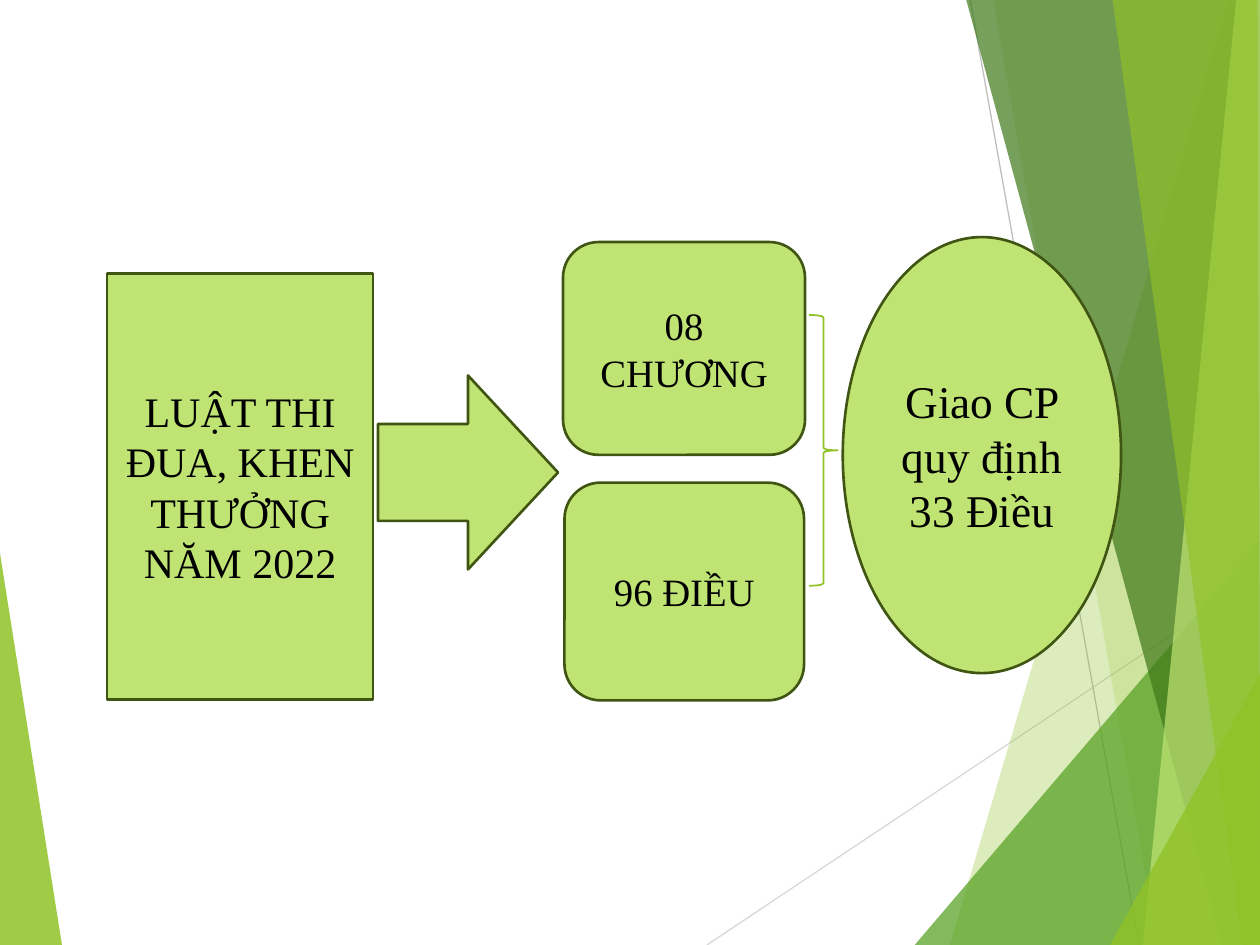
from dataclasses import dataclass

from lxml import etree
from pptx import Presentation
from pptx.dml.color import RGBColor
from pptx.enum import shapes, text
from pptx.oxml.ns import qn
from pptx.util import Cm, Pt


@dataclass(frozen=True)
class Theme:
    font: str = "Times New Roman"
    ink: str = "000000"
    lime: str = "90C226"
    pale: str = "C0E474"
    green: str = "54A021"
    forest: str = "3F7819"
    outline: str = "3F5511"
    ray_light: str = "D9D9D9"
    ray_dark: str = "BFBFBF"
    law_size: float = 24
    part_size: float = 22.1
    decree_size: float = 25.9


T = Theme()
W, H = 25.4, 19.05
SHAPE = shapes.MSO_SHAPE


def set_text(sp, content, size, color=T.ink, font=T.font):
    tf = sp.text_frame
    tf.word_wrap = True
    tf.vertical_anchor = text.MSO_ANCHOR.MIDDLE
    p = tf.paragraphs[0]
    p.alignment = text.PP_ALIGN.CENTER
    r = p.add_run()
    r.text = content
    r.font.name, r.font.size = font, Pt(size)
    r.font.color.rgb = RGBColor.from_string(color)


def set_line(sp, color, width):
    sp.line.color.rgb = RGBColor.from_string(color)
    sp.line.width = Pt(width)


def add_facet(s, left, top, points, color, opacity):
    pts = [(Cm(left + x), Cm(top + y)) for x, y in points]
    builder = s.shapes.build_freeform(*pts[0])
    builder.add_line_segments(pts[1:], close=True)
    sp = builder.convert_to_shape()
    sp.shadow.inherit = False
    sp.fill.solid()
    sp.fill.fore_color.rgb = RGBColor.from_string(color)
    sp.line.fill.background()
    # Transparency
    clr = sp.fill._xPr.find(qn("a:solidFill"))[0]
    etree.SubElement(clr, qn("a:alpha")).set("val", str(opacity * 1000))


def add_ray(s, left, top, start, end, color):
    ends = [Cm(v) for x, y in (start, end) for v in (left + x, top + y)]
    cxn = s.shapes.add_connector(shapes.MSO_CONNECTOR.STRAIGHT, *ends)
    set_line(cxn, color, 0.75)
    etree.SubElement(cxn._element.spPr, qn("a:effectLst"))


def add_backdrop(s, left, top, w, h):
    """Translucent facets along the edges of the box."""
    corner = [(w, h), (w, 0)]
    add_facet(s, left, top, [(0, 11.15), (1.25, h), (0, h)], T.lime, 85)
    add_ray(s, left, top, (14.25, h), (w, 11.61), T.ray_light)
    add_ray(s, left, top, (19.56, 0), (22.96, h), T.ray_dark)
    facets = [
        ([(24.77, 0), (19.15, h)] + corner, T.lime, 30),
        ([(20.02, 0), (23.34, h)] + corner, T.lime, 20),
        ([(18.44, h), (w, 10.9), (w, h)], T.green, 72),
        ([(19.48, 0), (24.64, h)] + corner, T.forest, 70),
        ([(24.92, 0), (23.04, h)] + corner, T.pale, 70),
        ([(22.43, 0), (25.04, h), (w, h), (25.35, 0)], T.lime, 65),
        ([(22.38, h), (w, 13.59), (w, h)], T.lime, 80),
    ]
    for points, color, opacity in facets:
        add_facet(s, left, top, points, color, opacity)


def add_flow(s, left, top):
    """The law, its chapters and articles, and what is left to decree."""
    # Kind, x, y, width, height, wording, type size
    parts = [
        (SHAPE.RECTANGLE, 0, 0.73, 5.36, 8.59,
         "LUẬT THI ĐUA, KHEN THƯỞNG NĂM 2022", T.law_size),
        (SHAPE.RIGHT_ARROW, 5.46, 2.79, 3.63, 3.91, None, None),
        (SHAPE.ROUNDED_RECTANGLE, 9.19, 0.1, 4.88, 4.29, "08 CHƯƠNG", T.part_size),
        (SHAPE.ROUNDED_RECTANGLE, 9.22, 4.95, 4.83, 4.39, "96 ĐIỀU", T.part_size),
        (SHAPE.RIGHT_BRACE, 14.15, 1.57, 0.58, 5.46, None, None),
        (SHAPE.OVAL, 14.83, 0, 5.61, 8.79, "Giao CP quy định 33 Điều", T.decree_size),
    ]
    for kind, x, y, w, h, wording, size in parts:
        sp = s.shapes.add_shape(kind, Cm(left + x), Cm(top + y), Cm(w), Cm(h))
        sp.shadow.inherit = False
        if kind == SHAPE.RIGHT_BRACE:
            sp.fill.background()
            set_line(sp, T.lime, 1)
        else:
            sp.fill.solid()
            sp.fill.fore_color.rgb = RGBColor.from_string(T.pale)
            set_line(sp, T.outline, 1.5)
        if wording:
            set_text(sp, wording, size)


def main():
    prs = Presentation()
    prs.slide_width, prs.slide_height = Cm(W), Cm(H)
    s = prs.slides.add_slide(prs.slide_layouts[6])
    add_backdrop(s, 0, 0, W, H)
    add_flow(s, 2.16, 4.78)
    prs.save("out.pptx")


if __name__ == "__main__":
    main()
